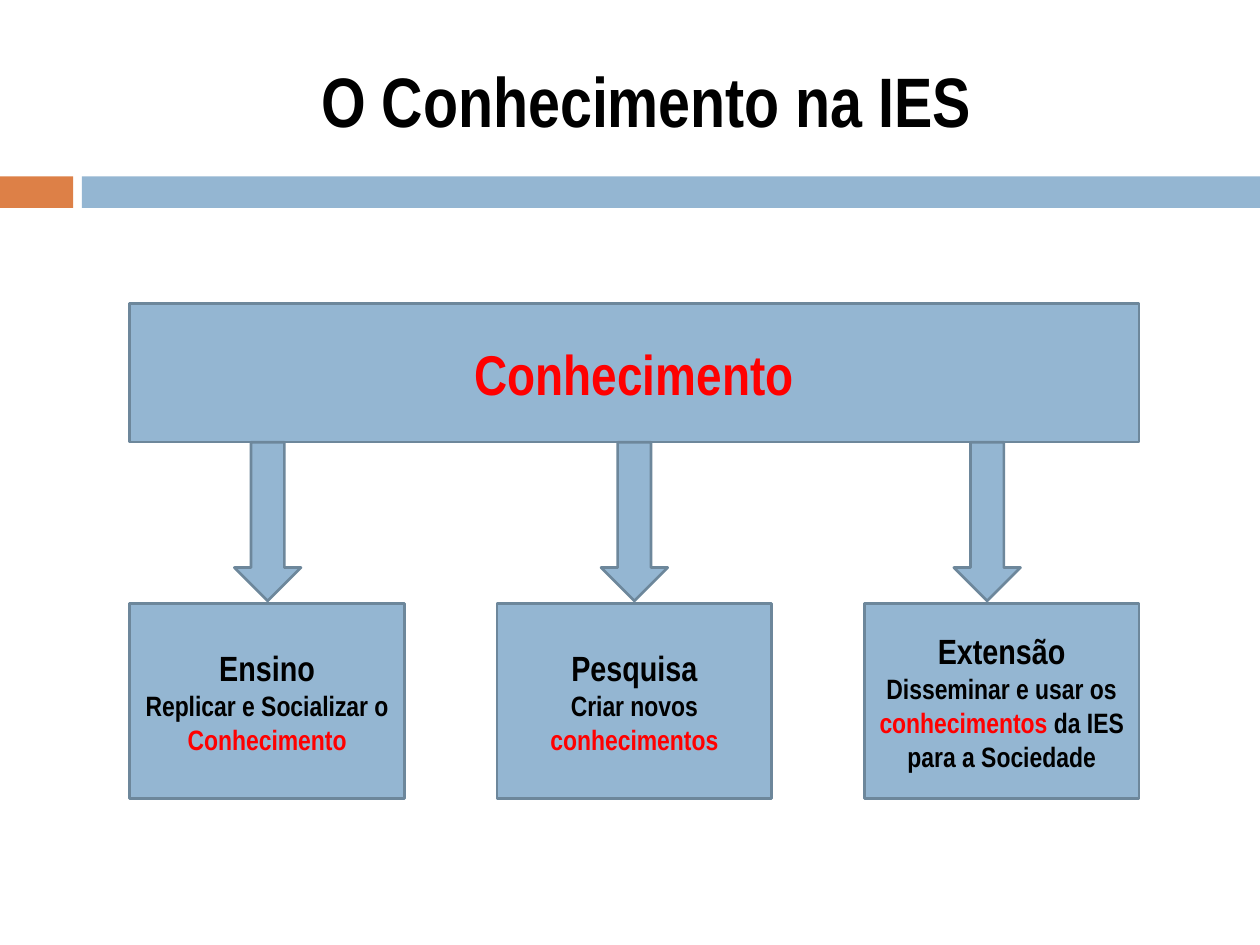
from dataclasses import dataclass

from pptx import Presentation
from pptx.dml.color import RGBColor
from pptx.enum.shapes import MSO_SHAPE
from pptx.enum.text import MSO_ANCHOR, PP_ALIGN
from pptx.util import Inches, Pt

RECTANGLE = MSO_SHAPE.RECTANGLE
DOWN_ARROW = MSO_SHAPE.DOWN_ARROW
CENTER = PP_ALIGN.CENTER
MIDDLE = MSO_ANCHOR.MIDDLE

FONT = "Arial Narrow"
BLUE, ORANGE, OUTLINE = "94B6D2", "DD8047", "6D879B"
BLACK, RED = "000000", "FF0000"

DIAGRAM_LEFT, DIAGRAM_WIDTH = 1.03, 8.01
ROOT_TOP, ROOT_HEIGHT = 2.41, 1.1
BRANCH_TOP, BRANCH_WIDTH, BRANCH_HEIGHT = 4.79, 2.18, 1.55
ARROW_TOP, ARROW_WIDTH, ARROW_HEIGHT = 3.51, 0.53, 1.26


@dataclass
class TextPart:
    text: str
    color: str = BLACK


@dataclass
class Branch:
    heading: str
    description: list[TextPart]
    arrow_left: float


BRANCHES = [
    Branch("Ensino", [TextPart("Replicar e Socializar o "),
                      TextPart("Conhecimento", RED)], 1.86),
    Branch("Pesquisa", [TextPart("Criar novos "),
                        TextPart("conhecimentos", RED)], 4.77),
    Branch("Extensão", [TextPart("Disseminar e usar os "),
                        TextPart("conhecimentos ", RED),
                        TextPart("da IES para a Sociedade")], 7.57),
]


def rgb(color: str) -> RGBColor:
    return RGBColor.from_string(color)


def add_block(slide, kind, left: float, top: float, width: float,
              height: float, fill: str = BLUE, outline: str | None = OUTLINE):
    shape = slide.shapes.add_shape(
        kind, Inches(left), Inches(top), Inches(width), Inches(height))
    shape.shadow.inherit = False
    shape.fill.solid()
    shape.fill.fore_color.rgb = rgb(fill)
    if outline:
        shape.line.color.rgb = rgb(outline)
        shape.line.width = Pt(1.5)
    else:
        shape.line.fill.background()
    return shape


def write_paragraph(paragraph, parts: list[TextPart], size: float) -> None:
    paragraph.alignment = CENTER
    paragraph.font.name = FONT
    paragraph.font.size = Pt(size)
    paragraph.font.bold = True
    for part in parts:
        run = paragraph.add_run()
        run.text = part.text
        run.font.color.rgb = rgb(part.color)


def add_title(slide, text: str) -> None:
    title = slide.shapes.title
    title.left, title.top = Inches(0.67), Inches(0.25)
    title.width, title.height = Inches(8.92), Inches(1.08)
    title.text_frame.vertical_anchor = MIDDLE
    write_paragraph(title.text_frame.paragraphs[0], [TextPart(text)], 40)


def add_branch(slide, branch: Branch, left: float) -> None:
    box = add_block(slide, RECTANGLE, left, BRANCH_TOP, BRANCH_WIDTH, BRANCH_HEIGHT)
    frame = box.text_frame
    write_paragraph(frame.paragraphs[0], [TextPart(branch.heading)], 20)
    write_paragraph(frame.add_paragraph(), branch.description, 16)
    add_block(slide, DOWN_ARROW, branch.arrow_left, ARROW_TOP, ARROW_WIDTH, ARROW_HEIGHT)


def main() -> None:
    presentation = Presentation()
    presentation.slide_width, presentation.slide_height = Inches(10), Inches(7.5)
    slide = presentation.slides.add_slide(presentation.slide_layouts[5])

    # Header band and title
    add_block(slide, RECTANGLE, 0, 1.4, 0.58, 0.25, ORANGE, None)
    add_block(slide, RECTANGLE, 0.65, 1.4, 9.35, 0.25, BLUE, None)
    add_title(slide, "O Conhecimento na IES")

    # Root of the diagram
    root = add_block(slide, RECTANGLE, DIAGRAM_LEFT, ROOT_TOP, DIAGRAM_WIDTH, ROOT_HEIGHT)
    write_paragraph(root.text_frame.paragraphs[0], [TextPart("Conhecimento", RED)], 32)

    # Evenly spread branches
    step = (DIAGRAM_WIDTH - BRANCH_WIDTH) / (len(BRANCHES) - 1)
    for index, branch in enumerate(BRANCHES):
        add_branch(slide, branch, DIAGRAM_LEFT + index * step)

    presentation.save("out.pptx")


if __name__ == "__main__":
    main()
